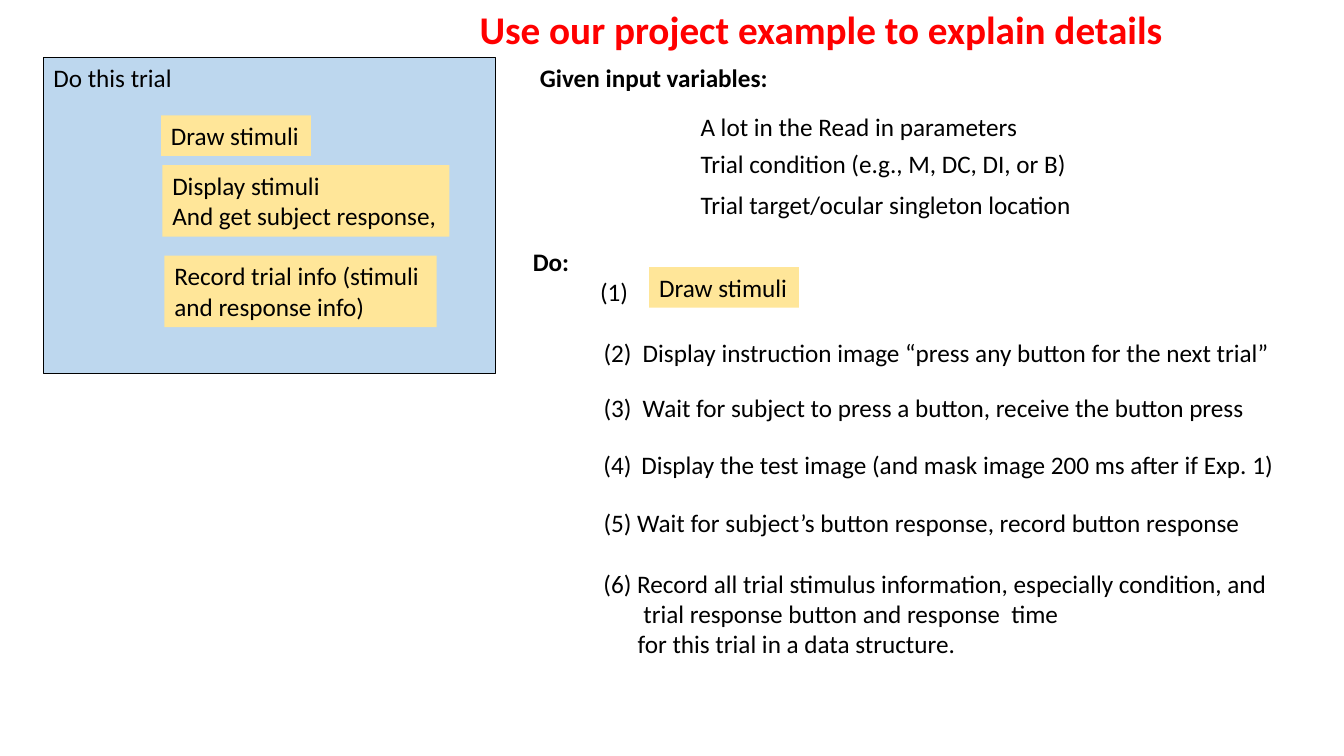
import pptx
import pptx.util
import pptx.dml.color
import pptx.enum.shapes
import pptx.enum.text
import lxml.etree
import pptx.oxml.ns

Pt = pptx.util.Pt
RGBColor = pptx.dml.color.RGBColor
BLACK = RGBColor(0x00, 0x00, 0x00)
RED = RGBColor(0xFF, 0x00, 0x00)
BLUE = RGBColor(0xBD, 0xD7, 0xEE)
YELLOW = RGBColor(0xFF, 0xE6, 0x99)
FONT = "Calibri"
LINE_HEIGHT = 29
INPUT_LEFT = 493.3
STEP_LEFT = 424

TITLE = ("Use our project example to explain details", 335.3, 0, 508.5, 41)
TRIAL = ("Do this trial", 31, 41, 323, 225.5)
TRIAL_PARTS = [
    ("Record trial info (stimuli and response info)", 117.5, 182.6, 194.4, 51, True),
    ("Display stimuli\nAnd get subject response,", 116, 118, 205, 51, False),
    ("Draw stimuli", 115, 82.4, 107, LINE_HEIGHT, False),
]
HEADINGS = [
    ("Given input variables:", 378.5, 41, 178.5),
    ("Do:", 373.5, 172.3, 41),
]
INPUTS = [
    ("A lot in the Read in parameters", 76, 271.5),
    ("Trial condition (e.g., M, DC, DI, or B)", 102.5, 291.5),
    ("Trial target/ocular singleton location", 132, 291.5),
]
FIRST_STEP = ("(1)", 421.5, 193.7, 34.5)
FIRST_ACTION = ("Draw stimuli", 463.7, 190.8, 107)
STEPS = [
    ("Display instruction image “press any button for the next trial”", 237.3, 492, 28),
    ("Wait for subject to press a button, receive the button press", 276.5, 478, 28),
    ("Display the test image (and mask image 200 ms after if Exp. 1)", 317.3, 499, 27),
    ("Wait for subject’s button response, record button response", 359, 475, 24),
    ("Record all trial stimulus information, especially condition, and\n"
     "trial response button and response  time\n"
     "for this trial in a data structure.", 402.2, 498, 24),
]
CONTINUATION_INDENTS = [28.5, 24.4]


def write(shape, text, size=18, color=BLACK, bold=False, wrap=False, fit=True):
    frame = shape.text_frame
    frame.text = text
    frame.word_wrap = wrap
    frame.vertical_anchor = pptx.enum.text.MSO_ANCHOR.TOP
    if fit:
        frame.auto_size = pptx.enum.text.MSO_AUTO_SIZE.SHAPE_TO_FIT_TEXT
    for para in frame.paragraphs:
        para.alignment = pptx.enum.text.PP_ALIGN.LEFT
        para.line_spacing = 1.0
        para.space_before = Pt(0)
        for span in para.runs:
            span.font.name = FONT
            span.font.size = Pt(size)
            span.font.bold = bold
            span.font.color.rgb = color


def add_label(shapes, text, left, top, width, height=LINE_HEIGHT, **style):
    box = shapes.add_textbox(Pt(left), Pt(top), Pt(width), Pt(height))
    write(box, text, **style)
    return box


def add_block(shapes, fill, text, left, top, width, height=LINE_HEIGHT, **style):
    block = shapes.add_shape(pptx.enum.shapes.MSO_SHAPE.RECTANGLE,
                             Pt(left), Pt(top), Pt(width), Pt(height))
    block.shadow.inherit = False
    block.fill.solid()
    block.fill.fore_color.rgb = fill
    block.line.fill.background()
    write(block, text, **style)
    return block


def indent(para, margin, number=None):
    props = para._p.get_or_add_pPr()
    props.set("marL", str(Pt(margin)))
    props.set("indent", str(-Pt(margin) if number else 0))
    if number:
        lxml.etree.SubElement(props, pptx.oxml.ns.qn("a:buFont"), typeface=FONT)
        lxml.etree.SubElement(props, pptx.oxml.ns.qn("a:buAutoNum"),
                              type="arabicParenBoth", startAt=str(number))


def main():
    deck = pptx.Presentation()
    deck.slide_width, deck.slide_height = Pt(960), Pt(540)
    page = deck.slides.add_slide(deck.slide_layouts.get_by_name("Title Only"))

    text, left, top, width, height = TITLE
    title = page.shapes.title
    title.left, title.top, title.width, title.height = map(Pt, (left, top, width, height))
    write(title, text, size=28, color=RED, bold=True)

    trial = page.shapes.add_group_shape()
    panel = add_block(trial.shapes, BLUE, *TRIAL, wrap=True, fit=False)
    panel.line.color.rgb = BLACK
    panel.line.width = Pt(0.75)
    for *part, wrap in TRIAL_PARTS:
        add_block(trial.shapes, YELLOW, *part, wrap=wrap)

    for heading in HEADINGS:
        add_label(page.shapes, *heading, bold=True)
    for text, top, width in INPUTS:
        add_label(page.shapes, text, INPUT_LEFT, top, width, wrap=True)

    add_block(page.shapes, YELLOW, *FIRST_ACTION)
    add_label(page.shapes, *FIRST_STEP)
    for number, (text, top, width, margin) in enumerate(STEPS, start=2):
        height = LINE_HEIGHT + 22 * text.count("\n")
        box = add_label(page.shapes, text, STEP_LEFT, top, width, height)
        first, *others = box.text_frame.paragraphs
        indent(first, margin, number)
        for para, offset in zip(others, CONTINUATION_INDENTS):
            indent(para, offset)

    deck.save("out.pptx")


if __name__ == "__main__":
    main()
